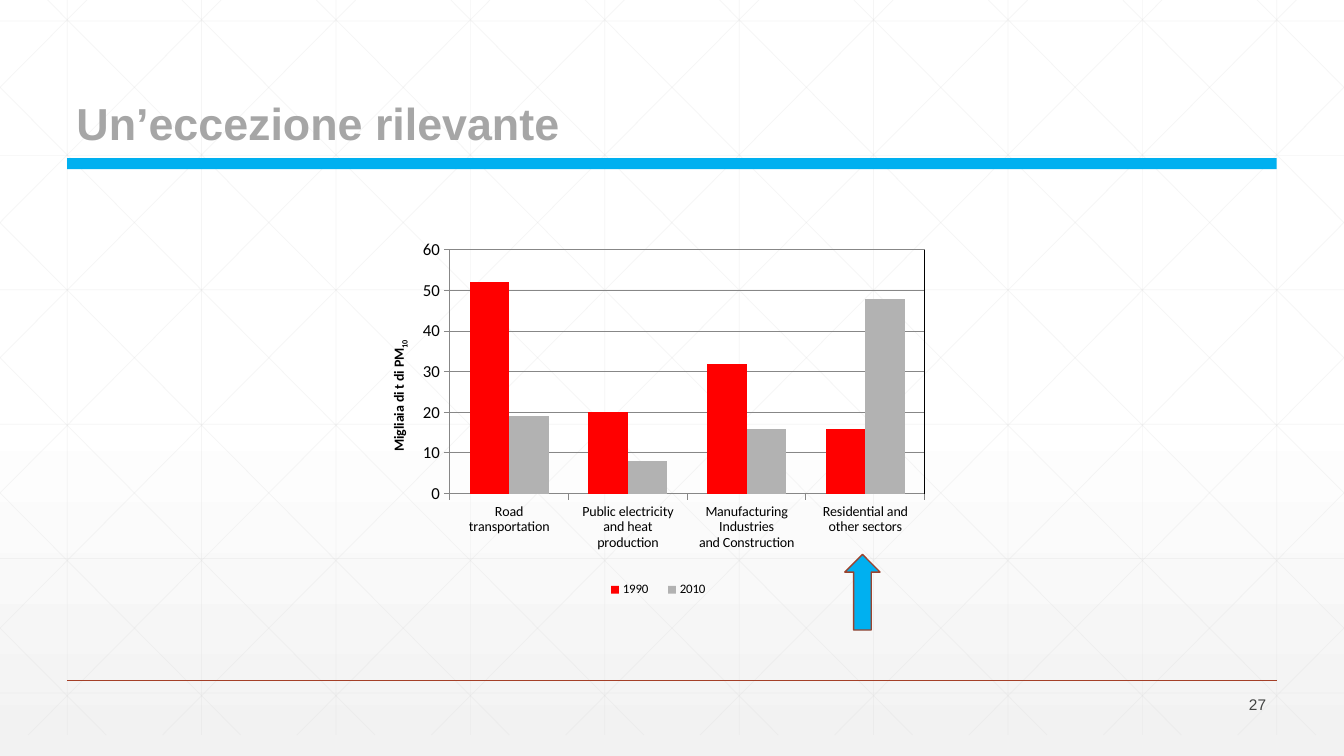
from lxml import etree
from pptx import Presentation
from pptx.chart.data import CategoryChartData
from pptx.dml.color import RGBColor
from pptx.enum.chart import XL_CHART_TYPE, XL_LEGEND_POSITION, XL_TICK_MARK
from pptx.enum.shapes import MSO_CONNECTOR, MSO_SHAPE
from pptx.enum.text import MSO_ANCHOR, PP_ALIGN
from pptx.oxml.ns import qn
from pptx.util import Pt

STRAIGHT = MSO_CONNECTOR.STRAIGHT
COLUMNS = XL_CHART_TYPE.COLUMN_CLUSTERED
OUTSIDE = XL_TICK_MARK.OUTSIDE
BOTTOM, MIDDLE = MSO_ANCHOR.BOTTOM, MSO_ANCHOR.MIDDLE
LEFT, RIGHT = PP_ALIGN.LEFT, PP_ALIGN.RIGHT

WHITE = RGBColor(0xFF, 0xFF, 0xFF)
BLACK = RGBColor(0, 0, 0)
PALE = RGBColor(0xF2, 0xF2, 0xF2)
GRID = RGBColor(0xD9, 0xD9, 0xD9)
AXIS = RGBColor(0x87, 0x87, 0x87)
RUST = RGBColor(0xA4, 0x3F, 0x27)
ARROW_EDGE = RGBColor(0x9B, 0x43, 0x2E)
BLUE = RGBColor(0x00, 0xB0, 0xF0)
TITLE_GREY = RGBColor(0xA6, 0xA6, 0xA6)
NUMBER_GREY = RGBColor(0x42, 0x43, 0x42)
RED = RGBColor(0xFF, 0, 0)
SILVER = RGBColor(0xB2, 0xB2, 0xB2)

# Content
TITLE = "Un’eccezione rilevante"
PAGE_NUMBER = "27"
AXIS_TITLE = ("Migliaia di t di PM", "10")
SECTORS = [
    "Road\ntransportation",
    "Public electricity\nand heat production",
    "Manufacturing Industries\nand Construction",
    "Residential and\nother sectors",
]
SERIES = [
    ("1990", (52, 20, 32, 16), RED),
    ("2010", (19, 8, 16, 48), SILVER),
]

# Geometry in points
WIDTH, HEIGHT = 960, 540
GRID_STEP, GRID_BOTTOM = 96, 525
DIAGONAL_START, DIAGONAL_SLOPE = 34, 1.006
CHART = (231.1, 170.6, 498.2, 280.1)
PLOT = (0.181, 0.028, 0.681, 0.622)

deck = Presentation()
deck.slide_width, deck.slide_height = Pt(WIDTH), Pt(HEIGHT)
page = deck.slides.add_slide(deck.slide_layouts[6])


def add_line(x1, y1, x2, y2, color, width, alpha=None):
    line = page.shapes.add_connector(STRAIGHT, Pt(x1), Pt(y1), Pt(x2), Pt(y2))
    line.line.color.rgb = color
    line.line.width = Pt(width)
    properties = line._element.spPr
    etree.SubElement(properties, qn("a:effectLst"))
    if alpha:
        tint = properties.find(".//" + qn("a:srgbClr"))
        etree.SubElement(tint, qn("a:alpha")).set("val", str(alpha * 1000))


def add_text(text, bounds, size, color, anchor, align, bold=False):
    box = page.shapes.add_textbox(*map(Pt, bounds))
    frame = box.text_frame
    frame.word_wrap = True
    frame.vertical_anchor = anchor
    frame.text = text
    para = frame.paragraphs[0]
    para.alignment = align
    para.line_spacing = 0.9
    set_font(para.runs[0].font, size, color, "Arial", bold)


def set_font(font, size, color=BLACK, name="Calibri", bold=False):
    font.name, font.size, font.bold = name, Pt(size), bold
    font.color.rgb = color


def add_block(kind, bounds):
    block = page.shapes.add_shape(kind, *map(Pt, bounds))
    block.shadow.inherit = False
    block.fill.solid()
    block.fill.fore_color.rgb = BLUE
    return block


def place(part, index, inner=False, **fractions):
    """Give a chart part a manual layout, as fractions of the chart."""
    for old in part.findall(qn("c:layout")):
        part.remove(old)
    layout = etree.Element(qn("c:layout"))
    manual = etree.SubElement(layout, qn("c:manualLayout"))
    settings = {"layoutTarget": "inner"} if inner else {}
    settings.update(xMode="edge", yMode="edge", **fractions)
    for name, value in settings.items():
        etree.SubElement(manual, qn("c:" + name)).set("val", str(value))
    part.insert(index, layout)


# Background gradient and lattice
fill = page.background.fill
fill.gradient()
fill.gradient_angle = 270
for stop, position, color in zip(fill.gradient_stops, (0.53, 1), (WHITE, PALE)):
    stop.position = position
    stop.color.rgb = color

lattice = [(x, 0, x, GRID_BOTTOM) for x in range(48, WIDTH, GRID_STEP)]
lattice += [(0, 15 + GRID_STEP * row, WIDTH, 15 + GRID_STEP * row) for row in range(6)]
for step in range(-5, 10):
    top_x = DIAGONAL_START + GRID_STEP * step
    x1 = max(0, top_x)
    x2 = min(WIDTH, top_x + GRID_BOTTOM / DIAGONAL_SLOPE)
    y1, y2 = ((x - top_x) * DIAGONAL_SLOPE for x in (x1, x2))
    lattice += [(x1, y1, x2, y2), (WIDTH - x1, y1, WIDTH - x2, y2)]
for ends in lattice:
    add_line(*ends, GRID, 0.5, alpha=25)

# Footer rule, title, page number and title bar
add_line(48, 486, 912, 486, RUST, 1)
add_text(TITLE, (47.5, 20.9, 810, 90), 32, TITLE_GREY, BOTTOM, LEFT, bold=True)
add_text(PAGE_NUMBER, (839.5, 495.4, 72, 17.3), 11, NUMBER_GREY, MIDDLE, RIGHT)
add_block(MSO_SHAPE.RECTANGLE, (48, 113, 864, 7.9)).line.fill.background()

# Chart
data = CategoryChartData()
data.categories = SECTORS
for name, values, color in SERIES:
    data.add_series(name, values)
chart = page.shapes.add_chart(COLUMNS, *map(Pt, CHART), data).chart
chart.has_title = False
set_font(chart.font, 10)
plot = chart.plots[0]
plot.gap_width, plot.overlap = 100, 0
plot.vary_by_categories = False
for series, (name, values, color) in zip(plot.series, SERIES):
    series.format.fill.solid()
    series.format.fill.fore_color.rgb = color
    series.invert_if_negative = False
place(chart._chartSpace.chart.plotArea, 0, inner=True, **dict(zip("xywh", PLOT)))

# Axes
sector_axis, tonnes_axis = chart.category_axis, chart.value_axis
for axis, size in ((sector_axis, 10), (tonnes_axis, 12)):
    axis.major_tick_mark = OUTSIDE
    axis.format.line.color.rgb = AXIS
    set_font(axis.tick_labels.font, size)
tonnes_axis.minimum_scale, tonnes_axis.maximum_scale = 0, 60
tonnes_axis.major_unit = 10
tonnes_axis.tick_labels.number_format = "#,##0"
tonnes_axis.tick_labels.number_format_is_linked = False
tonnes_axis.major_gridlines.format.line.color.rgb = AXIS

axis_title = tonnes_axis.axis_title
para = axis_title.text_frame.paragraphs[0]
for text in AXIS_TITLE:
    span = para.add_run()
    span.text = text
    set_font(span.font, 10, bold=True)
span.font._element.set("baseline", "-25000")
body = axis_title._element.find(".//" + qn("a:bodyPr"))
body.set("rot", "-5400000")
body.set("vert", "horz")
place(axis_title._element, 1, x=0.09, y=0.25)

# Legend
chart.has_legend = True
legend = chart.legend
legend.position = XL_LEGEND_POSITION.BOTTOM
legend.include_in_layout = False
set_font(legend.font, 9.2)
place(legend._element, 1, x=0.39, y=0.86, w=0.18, h=0.07)

# Right edge of the plot
plot_right = CHART[0] + CHART[2] * (PLOT[0] + PLOT[2])
plot_top = CHART[1] + CHART[3] * PLOT[1]
add_line(plot_right, plot_top, plot_right, plot_top + CHART[3] * PLOT[3], BLACK, 0.75)

# Arrow pointing up at the last sector
arrow = add_block(MSO_SHAPE.DOWN_ARROW, (603.4, 396, 25.2, 54))
arrow.rotation = 180
arrow.line.color.rgb = ARROW_EDGE
arrow.line.width = Pt(1)

deck.save("out.pptx")
